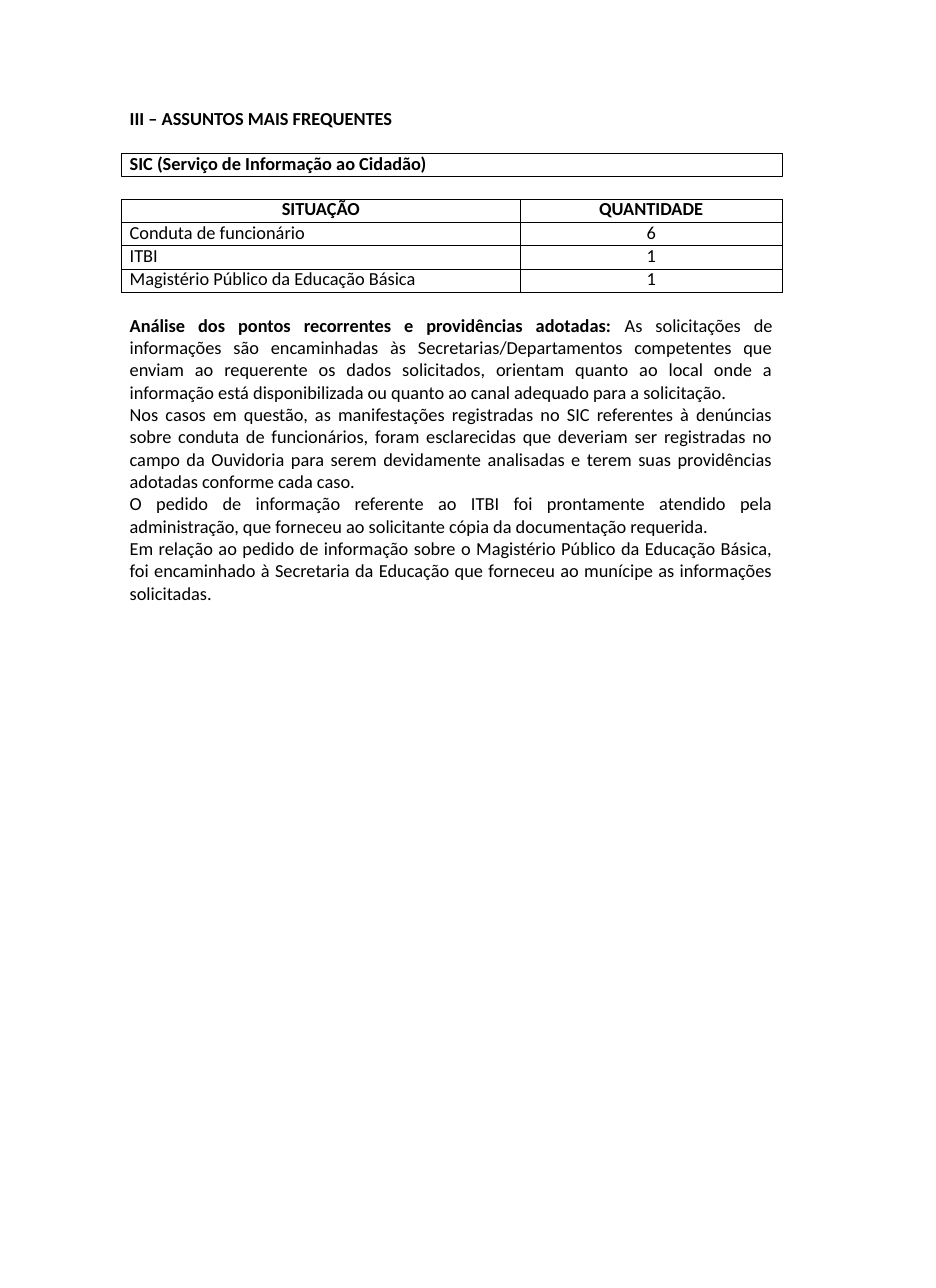
from dataclasses import dataclass

from lxml.etree import SubElement
from pptx import Presentation
from pptx.dml.color import RGBColor
from pptx.enum.shapes import MSO_SHAPE
from pptx.enum.text import MSO_ANCHOR, PP_ALIGN
from pptx.oxml.ns import qn
from pptx.util import Pt


@dataclass(frozen=True)
class Theme:
    font: str = "Calibri"
    size: float = 12
    ink: RGBColor = RGBColor(0, 0, 0)
    border: float = 0.5
    cell_indent: float = 5.4
    cell_line: float = 14.1
    body_line: float = 14.6


class Report:
    def __init__(self, slide, theme):
        self.slide = slide
        self.theme = theme

    def style_run(self, run, bold=False):
        font = run.font
        font.name = self.theme.font
        font.size = Pt(self.theme.size)
        font.bold = bold
        font.color.rgb = self.theme.ink

    def style_paragraph(self, paragraph, align, line, bold=False):
        paragraph.alignment = align
        paragraph.line_spacing = Pt(line)
        for run in paragraph.runs:
            self.style_run(run, bold)

    def clear_margins(self, frame):
        frame.margin_left = frame.margin_right = Pt(0)
        frame.margin_top = frame.margin_bottom = Pt(0)

    def text_box(self, left, top, width, height, wrap=True):
        box = self.slide.shapes.add_textbox(Pt(left), Pt(top), Pt(width), Pt(height))
        frame = box.text_frame
        self.clear_margins(frame)
        frame.margin_top = Pt(1)
        frame.word_wrap = wrap
        return frame

    def heading(self, text, left, top, width, height):
        frame = self.text_box(left, top, width, height, wrap=False)
        frame.text = text
        paragraph = frame.paragraphs[0]
        self.style_paragraph(paragraph, PP_ALIGN.LEFT, self.theme.body_line, bold=True)
        paragraph.space_before = Pt(1)

    def banner(self, text, left, top, width, height):
        shape = self.slide.shapes.add_shape(
            MSO_SHAPE.RECTANGLE, Pt(left), Pt(top), Pt(width), Pt(height))
        shape.shadow.inherit = False
        shape.fill.background()
        shape.line.color.rgb = self.theme.ink
        shape.line.width = Pt(self.theme.border)
        frame = shape.text_frame
        self.clear_margins(frame)
        frame.margin_left = Pt(self.theme.cell_indent)
        frame.vertical_anchor = MSO_ANCHOR.TOP
        frame.text = text
        self.style_paragraph(
            frame.paragraphs[0], PP_ALIGN.LEFT, self.theme.cell_line, bold=True)

    def cell_borders(self, cell):
        properties = cell._tc.get_or_add_tcPr()
        for position, side in enumerate(("a:lnL", "a:lnR", "a:lnT", "a:lnB")):
            line = SubElement(properties, qn(side), w=str(Pt(self.theme.border)))
            fill = SubElement(line, qn("a:solidFill"))
            SubElement(fill, qn("a:srgbClr"), val=str(self.theme.ink))
            properties.remove(line)
            properties.insert(position, line)

    def table(self, rows, left, top, column_widths, row_height):
        table = self.slide.shapes.add_table(
            len(rows), len(column_widths), Pt(left), Pt(top),
            Pt(sum(column_widths)), Pt(row_height * len(rows))).table
        table.first_row = table.horz_banding = False
        for column, width in zip(table.columns, column_widths):
            column.width = Pt(width)
        for row_index, values in enumerate(rows):
            table.rows[row_index].height = Pt(row_height)
            for column_index, value in enumerate(values):
                cell = table.cell(row_index, column_index)
                is_header = row_index == 0
                is_label = column_index == 0 and not is_header
                self.clear_margins(cell)
                cell.margin_left = Pt(self.theme.cell_indent if is_label else 0)
                cell.fill.background()
                self.cell_borders(cell)
                cell.text_frame.text = value
                self.style_paragraph(
                    cell.text_frame.paragraphs[0],
                    PP_ALIGN.LEFT if is_label else PP_ALIGN.CENTER,
                    self.theme.cell_line, bold=is_header)

    def analysis(self, lead, paragraphs, left, top, width, height):
        frame = self.text_box(left, top, width, height)
        frame.text = "\n".join(paragraphs)
        for paragraph in frame.paragraphs:
            self.style_paragraph(paragraph, PP_ALIGN.JUSTIFY, self.theme.body_line)
        # Bold lead-in before the first sentence
        first = frame.paragraphs[0]
        first.text = lead
        first.space_before = Pt(0.8)
        self.style_run(first.runs[0], bold=True)
        opening = first.add_run()
        opening.text = paragraphs[0]
        self.style_run(opening)


SUBJECTS = [
    ("SITUAÇÃO", "QUANTIDADE"),
    ("Conduta de funcionário", "6"),
    ("ITBI", "1"),
    ("Magistério Público da Educação Básica", "1"),
]

ANALYSIS = [
    "As solicitações de informações são encaminhadas às "
    "Secretarias/Departamentos competentes que enviam ao requerente os dados "
    "solicitados, orientam quanto ao local onde a informação está "
    "disponibilizada ou quanto ao canal adequado para a solicitação.",
    "Nos casos em questão, as manifestações registradas no SIC referentes à "
    "denúncias sobre conduta de funcionários, foram esclarecidas que deveriam "
    "ser registradas no campo da Ouvidoria para serem devidamente analisadas e "
    "terem suas providências adotadas conforme cada caso.",
    "O pedido de informação referente ao ITBI foi prontamente atendido pela "
    "administração, que forneceu ao solicitante cópia da documentação requerida.",
    "Em relação ao pedido de informação sobre o Magistério Público da Educação "
    "Básica, foi encaminhado à Secretaria da Educação que forneceu ao munícipe "
    "as informações solicitadas.",
]


def main():
    presentation = Presentation()
    presentation.slide_width = Pt(612)
    presentation.slide_height = Pt(842)
    slide = presentation.slides.add_slide(presentation.slide_layouts[6])
    report = Report(slide, Theme())

    text_left, frame_left = 84.8, 79.4
    column_widths = (260.8, 171.2)

    # Section title and channel name
    report.heading("III – ASSUNTOS MAIS FREQUENTES", text_left, 69, 174, 16.6)
    report.banner("SIC (Serviço de Informação ao Cidadão)",
                  frame_left, 100.1, sum(column_widths), 15.4)

    # Number of requests per subject
    report.table(SUBJECTS, frame_left, 130.3, column_widths, 15.2)

    # Analysis of the recurring points
    report.analysis("Análise dos pontos recorrentes e providências adotadas: ",
                    ANALYSIS, text_left, 204, 420.5, 192)

    presentation.save("out.pptx")


if __name__ == "__main__":
    main()
